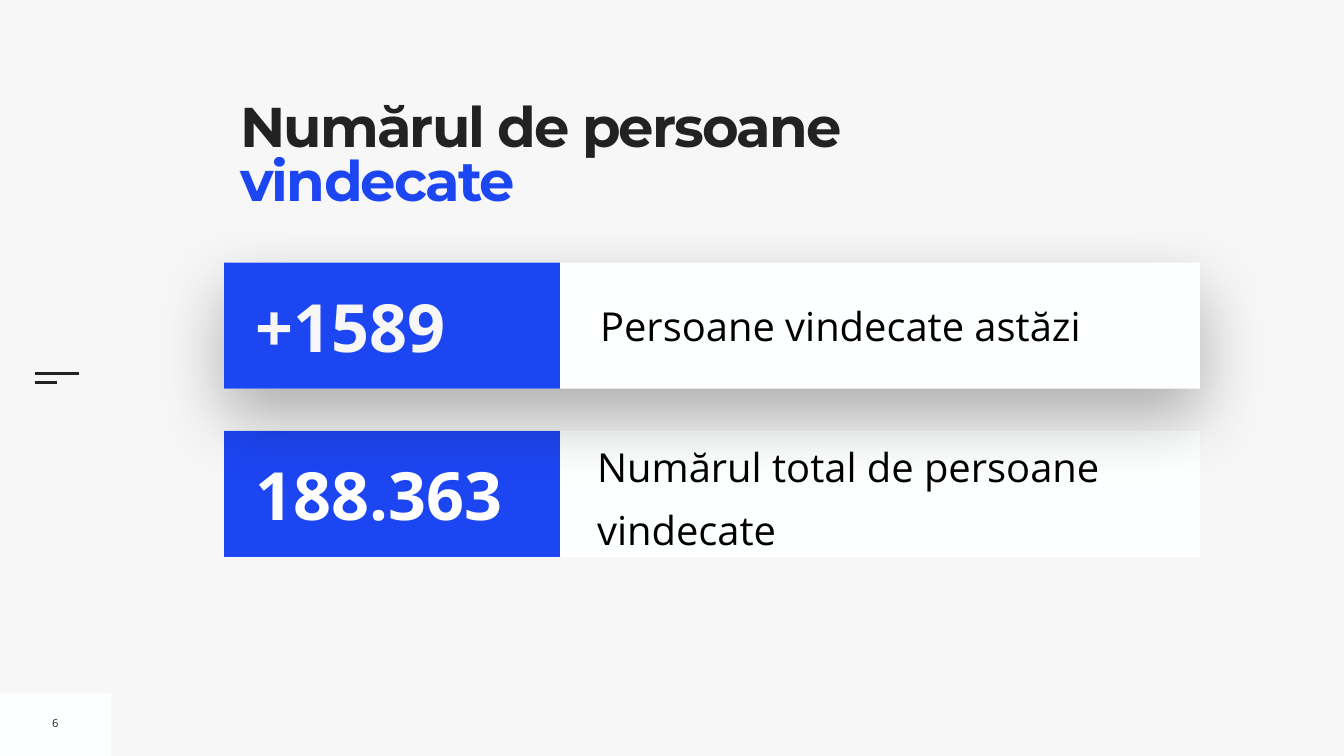
import pptx
import pptx.util
import pptx.dml.color
import pptx.enum.shapes
import pptx.enum.text
import pptx.oxml
import pptx.oxml.ns
from pptx.util import Inches

BLUE, WHITE, PAPER, INK, BLACK = "1D46F3", "FEFFFF", "F7F7F7", "222222", "000000"
BODY_FONT = "Open Sans"
ROW_LEFT, ROW_HEIGHT = 4.45, 2.5
VALUE_WIDTH = 6.66


def color(hex_string):
    return pptx.dml.color.RGBColor.from_string(hex_string)


def fill_solid(target, hex_string):
    target.fill.solid()
    target.fill.fore_color.rgb = color(hex_string)


def add_run(paragraph, text, size, hex_string, font=BODY_FONT, bold=False, spacing=None):
    """Spacing between letters is in points."""
    run = paragraph.add_run()
    run.text = text
    run.font.name = font
    run.font.size = pptx.util.Pt(size)
    run.font.bold = bold
    run.font.color.rgb = color(hex_string)
    if spacing is not None:
        run.font._element.set("spc", str(round(spacing * 100)))


def set_frame(frame, inset, anchor, wrap=True):
    frame.margin_left = frame.margin_right = Inches(inset)
    frame.margin_top = frame.margin_bottom = Inches(inset)
    frame.vertical_anchor = anchor
    frame.word_wrap = wrap
    frame.auto_size = pptx.enum.text.MSO_AUTO_SIZE.NONE


def add_text(slide, box, text, size, hex_string, bold=False, inset=0.1, wrap=True,
             align=pptx.enum.text.PP_ALIGN.LEFT, line_spacing=None, space_before=None):
    frame = slide.shapes.add_textbox(*map(Inches, box)).text_frame
    set_frame(frame, inset, pptx.enum.text.MSO_ANCHOR.MIDDLE, wrap)
    paragraph = frame.paragraphs[0]
    paragraph.alignment = align
    paragraph.line_spacing = line_spacing
    if space_before is not None:
        paragraph.space_before = pptx.util.Pt(space_before)
    add_run(paragraph, text, size, hex_string, bold=bold)


def add_panel(slide, box, hex_string):
    panel = slide.shapes.add_shape(
        pptx.enum.shapes.MSO_SHAPE.RECTANGLE, *map(Inches, box))
    fill_solid(panel, hex_string)
    panel.line.fill.background()
    panel.shadow.inherit = False
    return panel


def add_soft_shadow(panel):
    effects = panel._element.spPr.find(pptx.oxml.ns.qn("a:effectLst"))
    effects.append(pptx.oxml.parse_xml(
        f'<a:outerShdw {pptx.oxml.ns.nsdecls("a")} blurRad="{pptx.util.Pt(100)}" '
        f'dist="{pptx.util.Pt(40)}" dir="5400000" rotWithShape="0">'
        f'<a:srgbClr val="{BLACK}"><a:alpha val="30000"/></a:srgbClr></a:outerShdw>'))


def add_rule(slide, left, top, width):
    rule = slide.shapes.add_connector(
        pptx.enum.shapes.MSO_CONNECTOR.STRAIGHT,
        Inches(left), Inches(top), Inches(left + width), Inches(top))
    rule.line.color.rgb = color(INK)
    rule.line.width = pptx.util.Pt(3)
    rule._element.spPr.append(
        pptx.oxml.parse_xml(f'<a:effectLst {pptx.oxml.ns.nsdecls("a")}/>'))


def add_title(slide):
    title = slide.shapes.title
    title.left, title.top, title.width, title.height = map(
        Inches, (4.77, 2.07, 13.01, 2.73))
    fill_solid(title, PAPER)
    set_frame(title.text_frame, 0, pptx.enum.text.MSO_ANCHOR.TOP)
    paragraph = title.text_frame.paragraphs[0]
    paragraph.alignment = pptx.enum.text.PP_ALIGN.LEFT
    paragraph.line_spacing = 0.8
    for text, hex_string in (("Numărul de persoane ", INK), ("vindecate", BLUE)):
        add_run(paragraph, text, 80, hex_string, font="Montserrat", bold=True, spacing=-2.7)


def add_statistic(slide, top, value, value_color, label, label_box, raised=False, **label_format):
    """A white row with a blue value cell; a raised row casts a shadow."""
    row = add_panel(slide, (ROW_LEFT, top, 19.36, ROW_HEIGHT), WHITE)
    if raised:
        add_soft_shadow(row)
    add_text(slide, label_box, label, 57, BLACK, **label_format)
    add_panel(slide, (ROW_LEFT, top, VALUE_WIDTH, ROW_HEIGHT), BLUE)
    add_text(slide, (4.98, top + 0.35, 6.03, 1.8), value, 95, value_color, bold=True)


def main():
    deck = pptx.Presentation()
    deck.slide_width, deck.slide_height = Inches(26.67), Inches(15)
    slide = deck.slides.add_slide(deck.slide_layouts[5])
    fill_solid(slide.background, PAPER)

    add_panel(slide, (0, 13.76, 2.2, 1.24), WHITE)
    add_rule(slide, 0.69, 7.41, 0.88)
    add_rule(slide, 0.69, 7.59, 0.44)
    add_title(slide)
    add_text(slide, (0.93, 14.09, 0.34, 0.51), "6", 16, INK, wrap=False,
             align=pptx.enum.text.PP_ALIGN.CENTER)

    add_statistic(slide, 8.55, "188.363", "FFFFFF", "Numărul total de persoane vindecate",
                  (11.85, 8.56, 11.95, 2.36), inset=0, line_spacing=1.3, space_before=20)
    add_statistic(slide, 5.21, "+1589", PAPER, "Persoane vindecate astăzi",
                  (11.81, 5.87, 11.76, 1.16), raised=True)
    deck.save("out.pptx")


if __name__ == "__main__":
    main()
